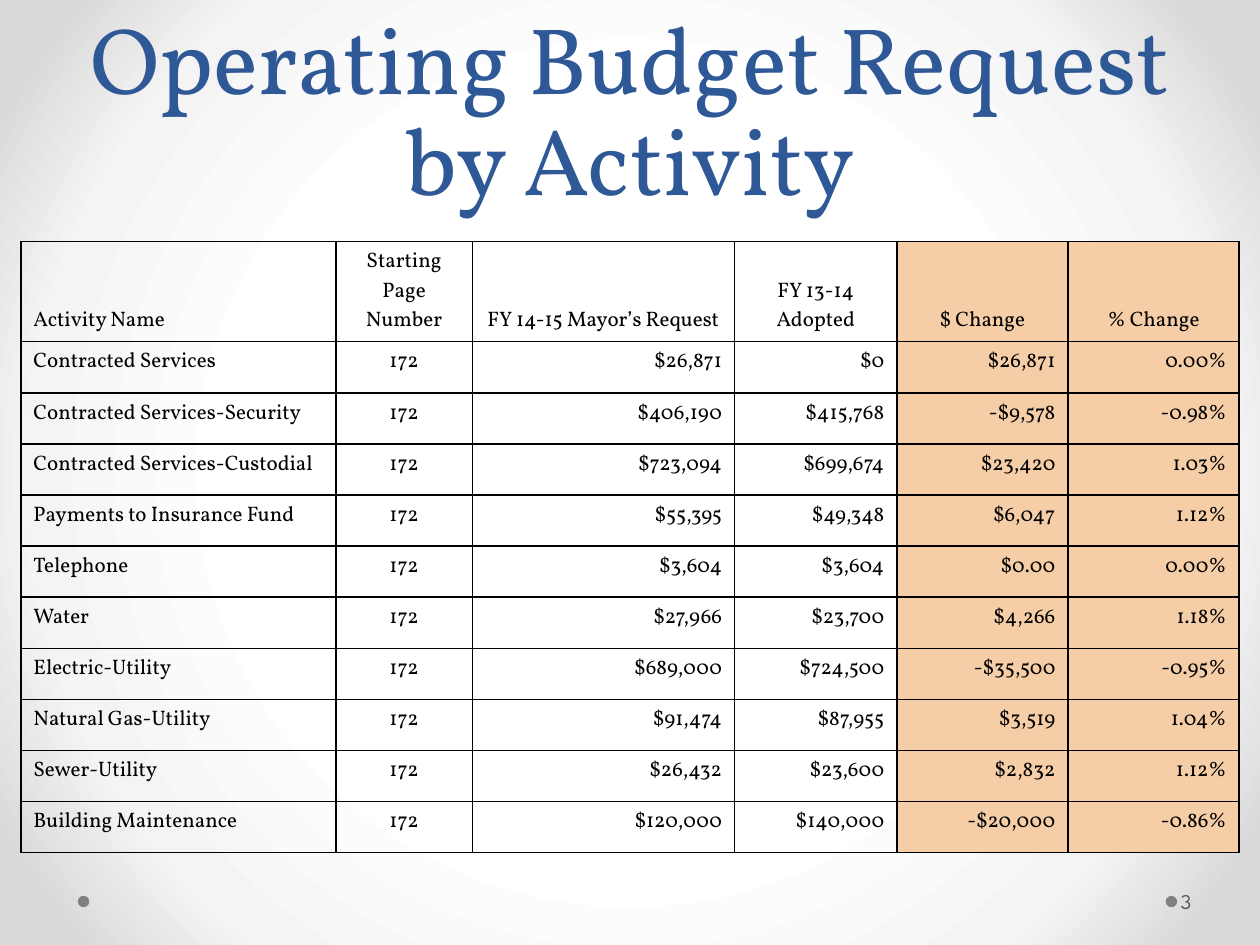
from lxml import etree
from pptx import Presentation
from pptx.dml.color import RGBColor
from pptx.enum.shapes import MSO_SHAPE
from pptx.enum.text import MSO_ANCHOR, MSO_AUTO_SIZE, PP_ALIGN
from pptx.oxml import parse_xml
from pptx.oxml.ns import nsdecls, qn
from pptx.util import Cm, Pt

# Content
TITLE = "Operating Budget Request by Activity"
PAGE_NUMBER = "3"
HEADER = ["Activity Name", "Starting Page Number", "FY 14-15 Mayor’s Request",
          "FY 13-14 Adopted", "$ Change", "% Change"]
START_PAGE = "172"
ACTIVITIES = [
    ("Contracted Services", "$26,871", "$0", "$26,871", "0.00%"),
    ("Contracted Services-Security", "$406,190", "$415,768", "-$9,578", "-0.98%"),
    ("Contracted Services-Custodial", "$723,094", "$699,674", "$23,420", "1.03%"),
    ("Payments to Insurance Fund", "$55,395", "$49,348", "$6,047", "1.12%"),
    ("Telephone", "$3,604", "$3,604", "$0.00", "0.00%"),
    ("Water", "$27,966", "$23,700", "$4,266", "1.18%"),
    ("Electric-Utility", "$689,000", "$724,500", "-$35,500", "-0.95%"),
    ("Natural Gas-Utility", "$91,474", "$87,955", "$3,519", "1.04%"),
    ("Sewer-Utility", "$26,432", "$23,600", "$2,832", "1.12%"),
    ("Building Maintenance", "$120,000", "$140,000", "-$20,000", "-0.86%"),
]

# Style
SERIF, SANS = "Vollkorn", "League Spartan"
BLUE = RGBColor(0x2F, 0x58, 0x97)
BLACK = RGBColor(0, 0, 0)
PEACH = RGBColor(0xF5, 0xCE, 0xA7)
DOT_GRAY = RGBColor(0x80, 0x80, 0x80)
NUMBER_GRAY = RGBColor(0x59, 0x59, 0x59)
BACKGROUND_STOPS = [(50, "FFFFFF"), (76, "F4F4F4"), (92, "DADADA")]

COL_WIDTHS = [6.35, 2.75, 5.29, 3.27, 3.45, 3.45]
HEADER_HEIGHT, ROW_HEIGHT = 1.27, 1.03
FIRST_CHANGE_COL = 4


def format_text(p, size, font, color, align=PP_ALIGN.LEFT):
    p.alignment = align
    for r in p.runs:
        r.font.size = Pt(size)
        r.font.name = font
        r.font.color.rgb = color


def set_background(s):
    fill = s.background.fill
    fill.gradient()
    stops = "".join(f'<a:gs pos="{pos * 1000}"><a:srgbClr val="{color}"/></a:gs>'
                    for pos, color in BACKGROUND_STOPS)
    grad = parse_xml(
        f'<a:gradFill {nsdecls("a")} rotWithShape="1"><a:gsLst>{stops}</a:gsLst>'
        '<a:path path="circle"><a:fillToRect l="50000" t="50000" r="50000" b="50000"/>'
        '</a:path></a:gradFill>')
    old = next(s.element.iter(qn("a:gradFill")))
    old.getparent().replace(old, grad)


def set_borders(cell):
    tc_pr = cell._tc.get_or_add_tcPr()
    for side in ("lnL", "lnR", "lnT", "lnB"):
        ln = etree.SubElement(tc_pr, qn(f"a:{side}"), w=str(Pt(1)))
        solid = etree.SubElement(ln, qn("a:solidFill"))
        etree.SubElement(solid, qn("a:srgbClr"), val=str(BLACK))


def column_align(row, col):
    if col == 0:
        return PP_ALIGN.LEFT
    return PP_ALIGN.CENTER if row == 0 or col == 1 else PP_ALIGN.RIGHT


def add_budget_table(s):
    rows = [HEADER] + [(name, START_PAGE, *values) for name, *values in ACTIVITIES]
    height = HEADER_HEIGHT + ROW_HEIGHT * len(ACTIVITIES)
    table = s.shapes.add_table(len(rows), len(HEADER), Cm(0.42), Cm(4.87),
                               Cm(sum(COL_WIDTHS)), Cm(height)).table
    table.first_row = table.horz_banding = False
    for column, width in zip(table.columns, COL_WIDTHS):
        column.width = Cm(width)
    for i, values in enumerate(rows):
        table.rows[i].height = Cm(ROW_HEIGHT if i else HEADER_HEIGHT)
        for j, value in enumerate(values):
            cell = table.cell(i, j)
            cell.text = value
            cell.vertical_anchor = MSO_ANCHOR.TOP if i else MSO_ANCHOR.BOTTOM
            format_text(cell.text_frame.paragraphs[0], 12, SERIF, BLACK,
                        column_align(i, j))
            set_borders(cell)
            if j >= FIRST_CHANGE_COL:
                cell.fill.solid()
                cell.fill.fore_color.rgb = PEACH
            else:
                cell.fill.background()


def main():
    prs = Presentation()
    prs.slide_width, prs.slide_height = Cm(25.4), Cm(19.05)
    s = prs.slides.add_slide(prs.slide_layouts[5])
    set_background(s)

    # Footer dots
    for left in (23.5, 1.57):
        sp = s.shapes.add_shape(MSO_SHAPE.OVAL, Cm(left), Cm(18.06), Cm(0.23), Cm(0.23))
        sp.shadow.inherit = False
        sp.fill.solid()
        sp.fill.fore_color.rgb = DOT_GRAY
        sp.line.fill.background()

    # Title
    title = s.shapes.title
    title.left, title.top, title.width, title.height = Cm(1.27), Cm(0), Cm(22.86), Cm(4.45)
    tf = title.text_frame
    tf.text = TITLE
    tf.auto_size = MSO_AUTO_SIZE.NONE
    tf.vertical_anchor = MSO_ANCHOR.BOTTOM
    p = tf.paragraphs[0]
    p.line_spacing = Pt(58)
    format_text(p, 54, SERIF, BLUE, PP_ALIGN.CENTER)

    add_budget_table(s)

    # Page number
    tf = s.shapes.add_textbox(Cm(23.72), Cm(17.65), Cm(1.55), Cm(1.02)).text_frame
    tf.word_wrap = True
    tf.vertical_anchor = MSO_ANCHOR.MIDDLE
    tf.margin_left = Cm(0.08)
    tf.margin_right = Cm(0.13)
    tf.text = PAGE_NUMBER
    format_text(tf.paragraphs[0], 12, SANS, NUMBER_GRAY)

    prs.save("out.pptx")


if __name__ == "__main__":
    main()
